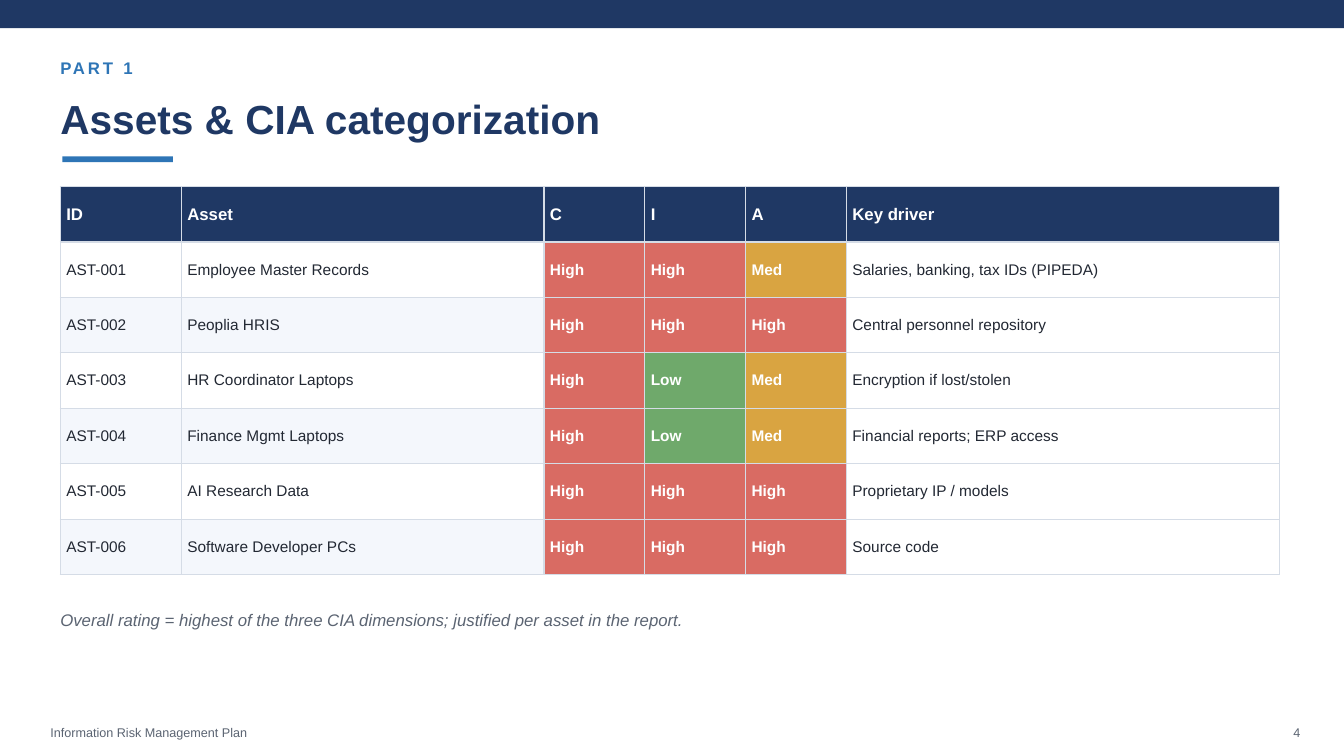
from dataclasses import dataclass

from lxml import etree
from pptx import Presentation
from pptx.dml.color import RGBColor
from pptx.enum.shapes import MSO_SHAPE
from pptx.enum.text import MSO_ANCHOR, MSO_AUTO_SIZE, PP_ALIGN
from pptx.oxml.ns import qn
from pptx.util import Cm, Pt

RECT = MSO_SHAPE.RECTANGLE
MIDDLE = MSO_ANCHOR.MIDDLE
GROW = MSO_AUTO_SIZE.SHAPE_TO_FIT_TEXT
LEFT, RIGHT = PP_ALIGN.LEFT, PP_ALIGN.RIGHT


@dataclass(frozen=True)
class Theme:
    font: str = "Arial"
    navy: str = "1F3864"
    blue: str = "2E75B6"
    ink: str = "222833"
    gray: str = "5B6472"
    white: str = "FFFFFF"
    pale: str = "F4F7FC"
    rule: str = "D5DCE6"
    high: str = "D96B63"
    med: str = "D9A441"
    low: str = "6FA96B"
    title: int = 29
    label: int = 12
    body: int = 11
    small: int = 9


THEME = Theme()
RATES = {"High": THEME.high, "Med": THEME.med, "Low": THEME.low}
WIDTHS = (3.05, 9.14, 2.54, 2.54, 2.54, 10.92)
HEADS = ("ID", "Asset", "C", "I", "A", "Key driver")
ASSETS = (
    ("Employee Master Records", "High", "High", "Med", "Salaries, banking, tax IDs (PIPEDA)"),
    ("Peoplia HRIS", "High", "High", "High", "Central personnel repository"),
    ("HR Coordinator Laptops", "High", "Low", "Med", "Encryption if lost/stolen"),
    ("Finance Mgmt Laptops", "High", "Low", "Med", "Financial reports; ERP access"),
    ("AI Research Data", "High", "High", "High", "Proprietary IP / models"),
    ("Software Developer PCs", "High", "High", "High", "Source code"),
)


def add_run(par, text, size, color, bold=False, italic=False):
    run = par.add_run()
    run.text = text
    font = run.font
    font.name, font.size = THEME.font, Pt(size)
    font.bold, font.italic = bold, italic
    font.color.rgb = RGBColor.from_string(color)
    return run


def set_frame(shape, align=LEFT):
    frame = shape.text_frame
    frame.margin_left = frame.margin_right = 0
    frame.margin_top = frame.margin_bottom = 0
    frame.vertical_anchor = MIDDLE
    frame.word_wrap = True
    frame.auto_size = GROW
    par = frame.paragraphs[0]
    par.alignment = align
    return par


def add_text(slide, box, text, size, color, align=LEFT, **style):
    shape = slide.shapes.add_textbox(*map(Cm, box))
    return add_run(set_frame(shape, align), text, size, color, **style)


def add_bar(slide, box, color):
    bar = slide.shapes.add_shape(RECT, *map(Cm, box))
    bar.shadow.inherit = False
    bar.fill.solid()
    bar.fill.fore_color.rgb = RGBColor.from_string(color)
    bar.line.fill.background()


def add_header(slide, box):
    left, top, width, height = box
    part = add_text(slide, (left, top, width, 0.48), "PART 1", THEME.label, THEME.blue, bold=True)
    part.font._element.set("spc", "200")
    title = slide.shapes.title
    title.left, title.top = Cm(left), Cm(top + 0.94)
    title.width, title.height = Cm(width), Cm(1.14)
    add_run(set_frame(title), "Assets & CIA categorization", THEME.title, THEME.navy, bold=True)
    add_bar(slide, (left + 0.05, top + height - 0.15, 2.79, 0.15), THEME.blue)


def add_edges(cell):
    props = cell._tc.get_or_add_tcPr()
    for side in ("lnL", "lnR", "lnT", "lnB"):
        line = etree.SubElement(props, qn("a:" + side), w=str(Pt(1)))
        fill = etree.SubElement(line, qn("a:solidFill"))
        etree.SubElement(fill, qn("a:srgbClr"), val=THEME.rule)


def fill_cell(cell, text, fill, size, color, bold):
    cell.margin_left = cell.margin_right = Cm(0.15)
    cell.margin_top = cell.margin_bottom = Cm(0.15)
    cell.vertical_anchor = MIDDLE
    add_edges(cell)
    cell.fill.solid()
    cell.fill.fore_color.rgb = RGBColor.from_string(fill)
    add_run(cell.text_frame.paragraphs[0], text, size, color, bold)


def cell_style(row, col, text):
    if row == 0:
        return THEME.navy, THEME.label, THEME.white, True
    if text in RATES:
        return RATES[text], THEME.body, THEME.white, True
    shaded = row % 2 == 0 and col < 2
    return THEME.pale if shaded else THEME.white, THEME.body, THEME.ink, False


def add_grid(slide, box):
    rows = [HEADS] + [(f"AST-{num:03}", *asset) for num, asset in enumerate(ASSETS, 1)]
    table = slide.shapes.add_table(len(rows), len(HEADS), *map(Cm, box)).table
    table.horz_banding = False
    for col, width in zip(table.columns, WIDTHS):
        col.width = Cm(width)
    for row, texts in enumerate(rows):
        table.rows[row].height = Cm(box[3] / len(rows))
        for col, text in enumerate(texts):
            fill_cell(table.cell(row, col), text, *cell_style(row, col, text))


def add_note(slide, box):
    text = "Overall rating = highest of the three CIA dimensions; justified per asset in the report."
    add_text(slide, box, text, THEME.label, THEME.gray, italic=True)


def add_footer(slide, box):
    left, top, width, height = box
    add_text(slide, (left, top, 25.4, height), "Information Risk Management Plan",
             THEME.small, THEME.gray)
    add_text(slide, (left + width - 1.27, top, 1.27, height), "4",
             THEME.small, THEME.gray, RIGHT)


def main():
    deck = Presentation()
    deck.slide_width, deck.slide_height = Cm(33.87), Cm(19.05)
    slide = deck.slides.add_slide(deck.slide_layouts[5])
    add_bar(slide, (0, 0, 33.87, 0.71), THEME.navy)
    add_header(slide, (1.52, 1.47, 30.73, 2.62))
    add_grid(slide, (1.52, 4.7, 30.73, 9.78))
    add_note(slide, (1.52, 15.39, 29.21, 0.48))
    add_footer(slide, (1.27, 18.29, 31.5, 0.36))
    deck.save("out.pptx")


if __name__ == "__main__":
    main()
